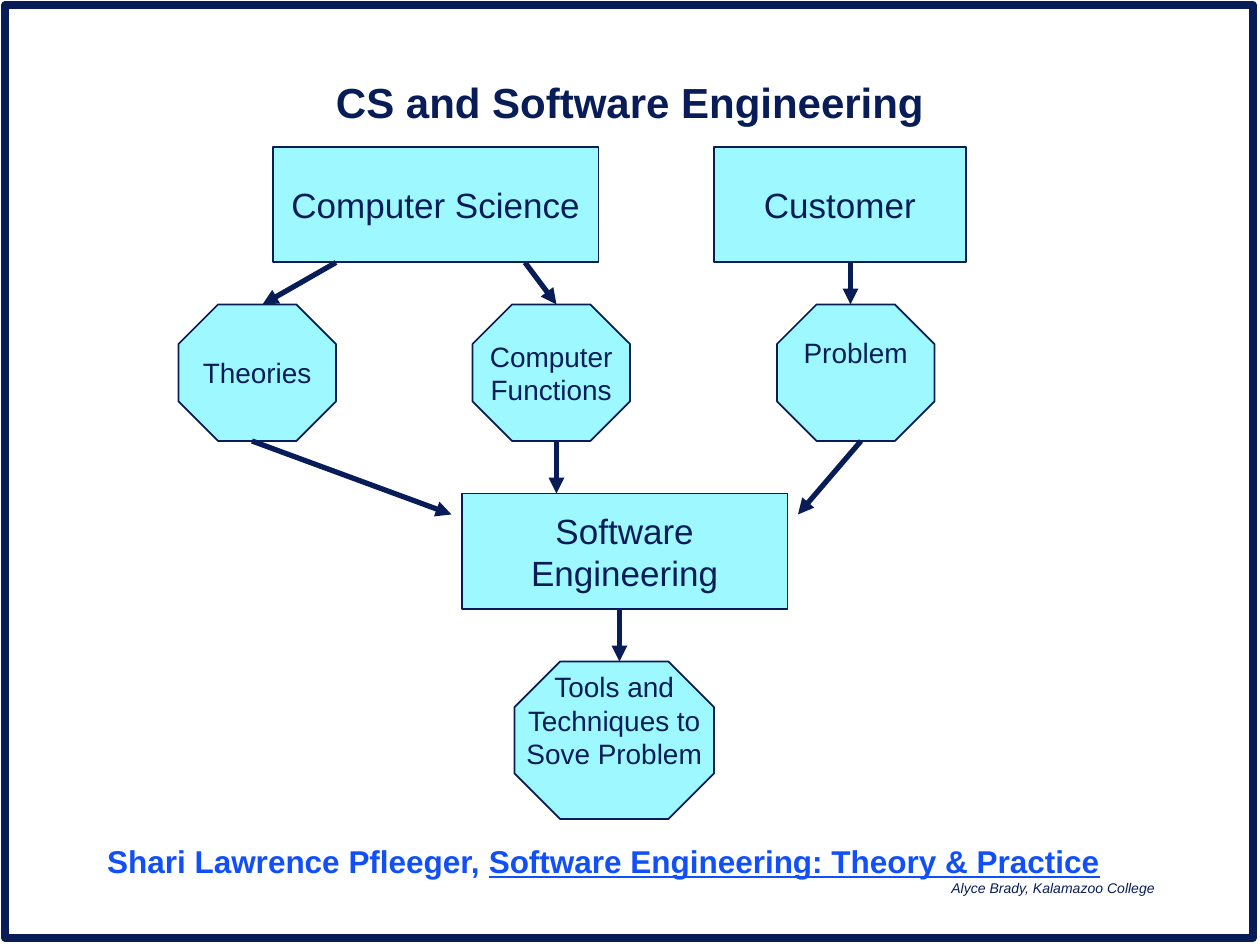
from dataclasses import dataclass

from lxml.etree import SubElement
from pptx import Presentation
from pptx.dml.color import RGBColor
from pptx.enum.shapes import MSO_CONNECTOR as Connector, MSO_SHAPE as Preset
from pptx.enum.text import MSO_ANCHOR as Anchor, MSO_AUTO_SIZE as AutoSize, PP_ALIGN as Align
from pptx.oxml.ns import qn
from pptx.util import Pt

COLORS = {"navy": "081D58", "cyan": "9DF9FF", "blue": "114FFB"}
FONT = "Arial"
INSET = 3.6


@dataclass
class Node:
    text: str
    left: float
    top: float
    width: float
    height: float
    preset: Preset = Preset.RECTANGLE
    size: float = 20
    lift: float = 0


@dataclass
class Arrow:
    x1: float
    y1: float
    x2: float
    y2: float


RECT_HEIGHT = 66
RESULT_ROW = 174
OCTAGON = {"preset": Preset.OCTAGON, "size": 16}
RESULT = {"top": RESULT_ROW, "width": 90, "height": 78, **OCTAGON}

NODES = [
    Node("Computer Science", 156, 84, 186, RECT_HEIGHT),
    Node("Customer", 408, 84, 144, RECT_HEIGHT),
    Node("Theories", 102, **RESULT),
    Node("Computer\nFunctions", 270, **RESULT),
    Node("Problem", 444, **RESULT, lift=23),
    Node("Software\nEngineering", 264, 282, 186, RECT_HEIGHT),
    Node("Tools and\nTechniques to\nSove Problem", 294, 378, 114, 90, **OCTAGON, lift=23),
]

ARROWS = [
    Arrow(192, 150, 150, RESULT_ROW),
    Arrow(300, 150, 318, RESULT_ROW),
    Arrow(486, 150, 486, RESULT_ROW),
    Arrow(144, 252, 258, 294),
    Arrow(318, 252, 318, 282),
    Arrow(492, 252, 456, 294),
    Arrow(354, 348, 354, 378),
]


def color(name: str) -> RGBColor:
    return RGBColor.from_string(COLORS[name])


def place(shape, left: float, top: float, width: float, height: float) -> None:
    shape.left, shape.top = Pt(left), Pt(top)
    shape.width, shape.height = Pt(width), Pt(height)


def format_runs(frame, size: float, tint: str = "navy", bold: bool = False, italic: bool = False) -> None:
    for para in frame.paragraphs:
        for span in para.runs:
            font = span.font
            font.name, font.size = FONT, Pt(size)
            font.bold, font.italic = bold, italic
            font.color.rgb = color(tint)


def draw_frame(page) -> None:
    frame = page.shapes.add_shape(Preset.RECTANGLE, Pt(3), Pt(3), Pt(713), Pt(533))
    frame.shadow.inherit = False
    frame.fill.background()
    frame.line.color.rgb = color("navy")
    frame.line.width = Pt(4.5)


def draw_credit(page) -> None:
    box = page.shapes.add_textbox(Pt(536.5), Pt(499), Pt(131), Pt(16.5))
    frame = box.text_frame
    frame.word_wrap = False
    frame.text = "Alyce Brady, Kalamazoo College"
    format_runs(frame, 8, italic=True)


def fill_title(page) -> None:
    title = page.shapes.title
    place(title, 92, 42, 536, 36)
    frame = title.text_frame
    frame.text = "CS and Software Engineering"
    frame.auto_size = AutoSize.NONE
    frame.vertical_anchor = Anchor.MIDDLE
    para = frame.paragraphs[0]
    para.alignment = Align.CENTER
    para.line_spacing = 0.9
    format_runs(frame, 24, bold=True)


def fill_citation(page) -> None:
    body = page.placeholders[1]
    place(body, 54, 156, 618, 360)
    frame = body.text_frame
    frame.auto_size = AutoSize.NONE
    frame.vertical_anchor = Anchor.BOTTOM
    frame.margin_bottom = Pt(13)
    para = frame.paragraphs[0]
    para.text = "Shari Lawrence Pfleeger, "
    book = para.add_run()
    book.text = "Software Engineering: Theory & Practice"
    book.font.underline = True
    para.line_spacing = 0.9
    para.space_before = Pt(0)
    properties = para._p.get_or_add_pPr()
    properties.set("marL", str(Pt(27)))
    properties.set("indent", str(Pt(-27)))
    SubElement(properties, qn("a:buNone"))
    format_runs(frame, 18, "blue", bold=True)


def draw_node(page, node: Node) -> None:
    shape = page.shapes.add_shape(
        node.preset, Pt(node.left), Pt(node.top), Pt(node.width), Pt(node.height)
    )
    if node.preset == Preset.OCTAGON:
        shape.adjustments[0] = 0.29
    shape.shadow.inherit = False
    shape.fill.solid()
    shape.fill.fore_color.rgb = color("cyan")
    shape.line.color.rgb = color("navy")
    shape.line.width = Pt(1)
    frame = shape.text_frame
    frame.text = node.text
    frame.word_wrap = False
    frame.vertical_anchor = Anchor.MIDDLE
    frame.margin_bottom = Pt(INSET + node.lift)
    for para in frame.paragraphs:
        para.alignment = Align.CENTER
    format_runs(frame, node.size)


def draw_arrow(page, arrow: Arrow) -> None:
    line = page.shapes.add_connector(
        Connector.STRAIGHT, Pt(arrow.x1), Pt(arrow.y1), Pt(arrow.x2), Pt(arrow.y2)
    )
    line.line.color.rgb = color("navy")
    line.line.width = Pt(3)
    SubElement(line.line._get_or_add_ln(), qn("a:tailEnd"), type="triangle")
    SubElement(line._element.spPr, qn("a:effectLst"))


def main() -> None:
    deck = Presentation()
    deck.slide_width, deck.slide_height = Pt(720), Pt(540)
    page = deck.slides.add_slide(deck.slide_layouts[1])
    draw_frame(page)
    draw_credit(page)
    fill_title(page)
    fill_citation(page)
    for node in NODES:
        draw_node(page, node)
    for arrow in ARROWS:
        draw_arrow(page, arrow)
    deck.save("out.pptx")


if __name__ == "__main__":
    main()
